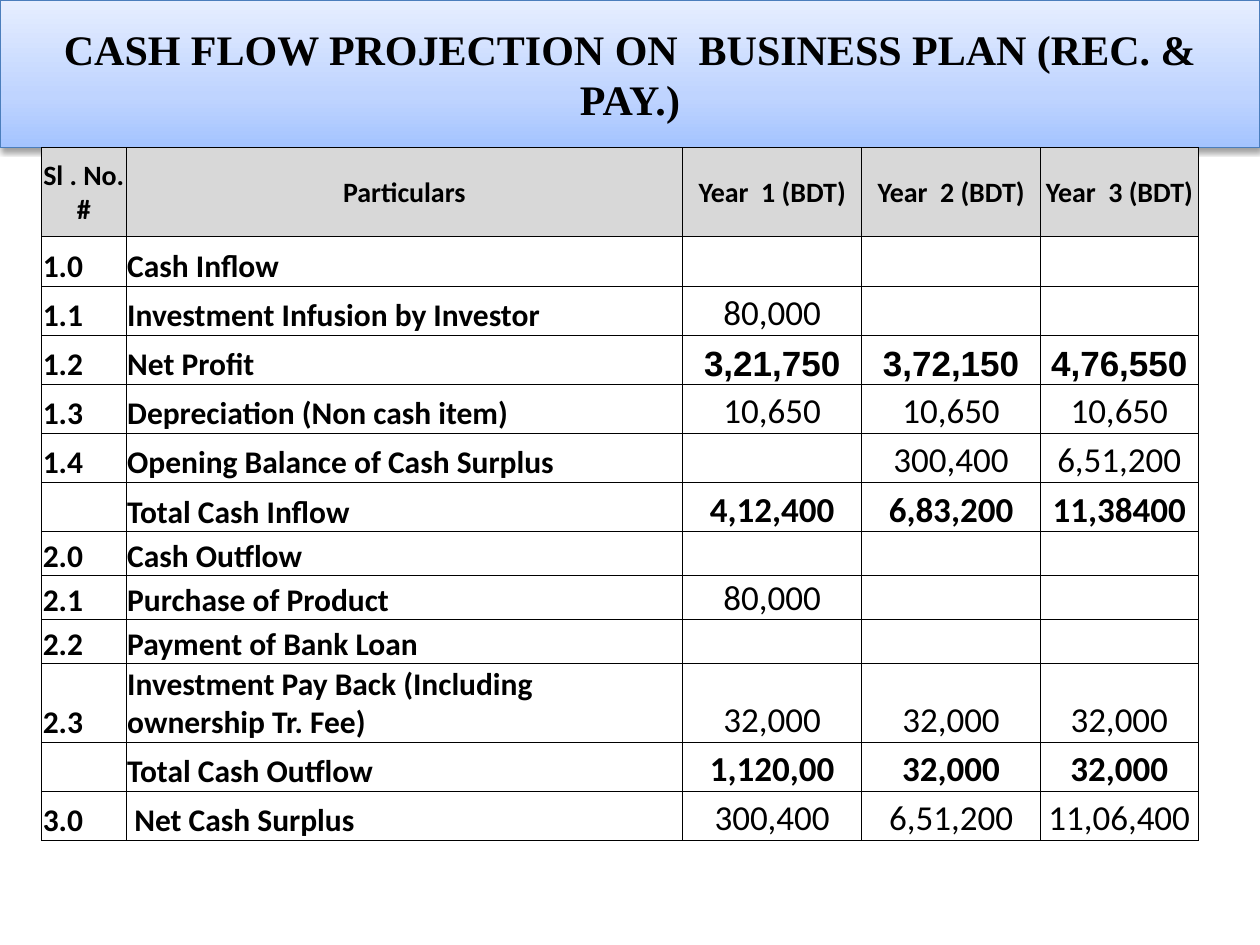
from lxml import etree
from pptx import Presentation
from pptx.dml.color import RGBColor as RGB
from pptx.enum.shapes import MSO_SHAPE as SHAPE
from pptx.enum.text import MSO_ANCHOR as ANCHOR, PP_ALIGN as ALIGN
from pptx.oxml import parse_xml
from pptx.oxml.ns import qn
from pptx.util import Inches, Pt

HEX = {"ink": "000000", "edge": "4B7EBC", "head": "D8D8D8", "cell": "FFFFFF",
       "low": "A4C4FF", "mid": "BFD4FF", "top": "E6EEFF"}
NS = 'xmlns:a="http://schemas.openxmlformats.org/drawingml/2006/main"'


def write(frame, text, size, font="Calibri", bold=True, align=ALIGN.CENTER):
    para = frame.paragraphs[0]
    para.alignment = align
    run = para.add_run()
    run.text = text
    run.font.size = Pt(size)
    run.font.name = font
    run.font.bold = bold
    run.font.color.rgb = RGB.from_string(HEX["ink"])


def frame_cell(cell):
    """Give the cell thin black borders on all four sides."""
    props = cell._tc.get_or_add_tcPr()
    for side in ("lnL", "lnR", "lnT", "lnB"):
        line = etree.SubElement(props, qn("a:" + side), w=str(Pt(0.5)))
        fill = etree.SubElement(line, qn("a:solidFill"))
        etree.SubElement(fill, qn("a:srgbClr"), val=HEX["ink"])


deck = Presentation()
deck.slide_width, deck.slide_height = Inches(10), Inches(7.5)
slide = deck.slides.add_slide(deck.slide_layouts[6])

# Title band
band = slide.shapes.add_shape(SHAPE.RECTANGLE, 0, 0, Inches(10), Inches(1.17))
band.line.color.rgb = RGB.from_string(HEX["edge"])
band.line.width = Pt(0.75)
stops = "".join(f'<a:gs pos="{pos * 1000}"><a:srgbClr val="{HEX[name]}"/></a:gs>'
                for pos, name in ((0, "low"), (35, "mid"), (100, "top")))
look = band._element.spPr
look.find(qn("a:prstGeom")).addnext(parse_xml(
    f'<a:gradFill {NS}><a:gsLst>{stops}</a:gsLst>'
    '<a:lin ang="16200000" scaled="0"/></a:gradFill>'))
look.append(parse_xml(
    f'<a:effectLst {NS}><a:outerShdw blurRad="{Pt(3.1)}" dist="{Pt(1.6)}" '
    f'dir="5400000" rotWithShape="0"><a:srgbClr val="{HEX["ink"]}">'
    '<a:alpha val="38000"/></a:srgbClr></a:outerShdw></a:effectLst>'))
band.text_frame.word_wrap = True
band.text_frame.vertical_anchor = ANCHOR.MIDDLE
write(band.text_frame, "CASH FLOW PROJECTION ON  BUSINESS PLAN (REC. & PAY.)",
      24, "Times New Roman")

# Cash flow table
rows = [
    ("Sl . No. #", "Particulars", "Year  1 (BDT)", "Year  2 (BDT)", "Year  3 (BDT)"),
    ("1.0", "Cash Inflow", "", "", ""),
    ("1.1", "Investment Infusion by Investor", "80,000", "", ""),
    ("1.2", "Net Profit", "3,21,750", "3,72,150", "4,76,550"),
    ("1.3", "Depreciation (Non cash item)", "10,650", "10,650", "10,650"),
    ("1.4", "Opening Balance of Cash Surplus", "", "300,400", "6,51,200"),
    ("", "Total Cash Inflow", "4,12,400", "6,83,200", "11,38400"),
    ("2.0", "Cash Outflow", "", "", ""),
    ("2.1", "Purchase of Product", "80,000", "", ""),
    ("2.2", "Payment of Bank Loan", "", "", ""),
    ("2.3", "Investment Pay Back (Including  ownership Tr. Fee)",
     "32,000", "32,000", "32,000"),
    ("", "Total Cash Outflow", "1,120,00", "32,000", "32,000"),
    ("3.0", " Net Cash Surplus", "300,400", "6,51,200", "11,06,400"),
]
widths = [0.67, 4.42, 1.42, 1.42, 1.25]
heights = [0.71] + [0.39] * 6 + [0.35] * 3 + [0.62] + [0.39] * 2

table = slide.shapes.add_table(len(rows), len(widths), Inches(0.33), Inches(1.17),
                               Inches(sum(widths)), Inches(sum(heights))).table
for col, width in zip(table.columns, widths):
    col.width = Inches(width)
for row, height in zip(table.rows, heights):
    row.height = Inches(height)

for r, row in enumerate(rows):
    profit = row[1] == "Net Profit"
    strong = profit or row[1].startswith("Total")
    for c, text in enumerate(row):
        cell = table.cell(r, c)
        frame_cell(cell)
        cell.fill.solid()
        cell.fill.fore_color.rgb = RGB.from_string(HEX["cell" if r else "head"])
        cell.margin_left = cell.margin_right = cell.margin_top = Inches(0.01)
        cell.margin_bottom = 0
        cell.vertical_anchor = ANCHOR.BOTTOM if r else ANCHOR.MIDDLE
        if not text:
            continue
        if r == 0:
            write(cell.text_frame, text, 16)
        elif c < 2:
            write(cell.text_frame, text, 18, align=ALIGN.LEFT)
        else:
            write(cell.text_frame, text, 20, "Arial" if profit else "Calibri", strong)

deck.save("out.pptx")
